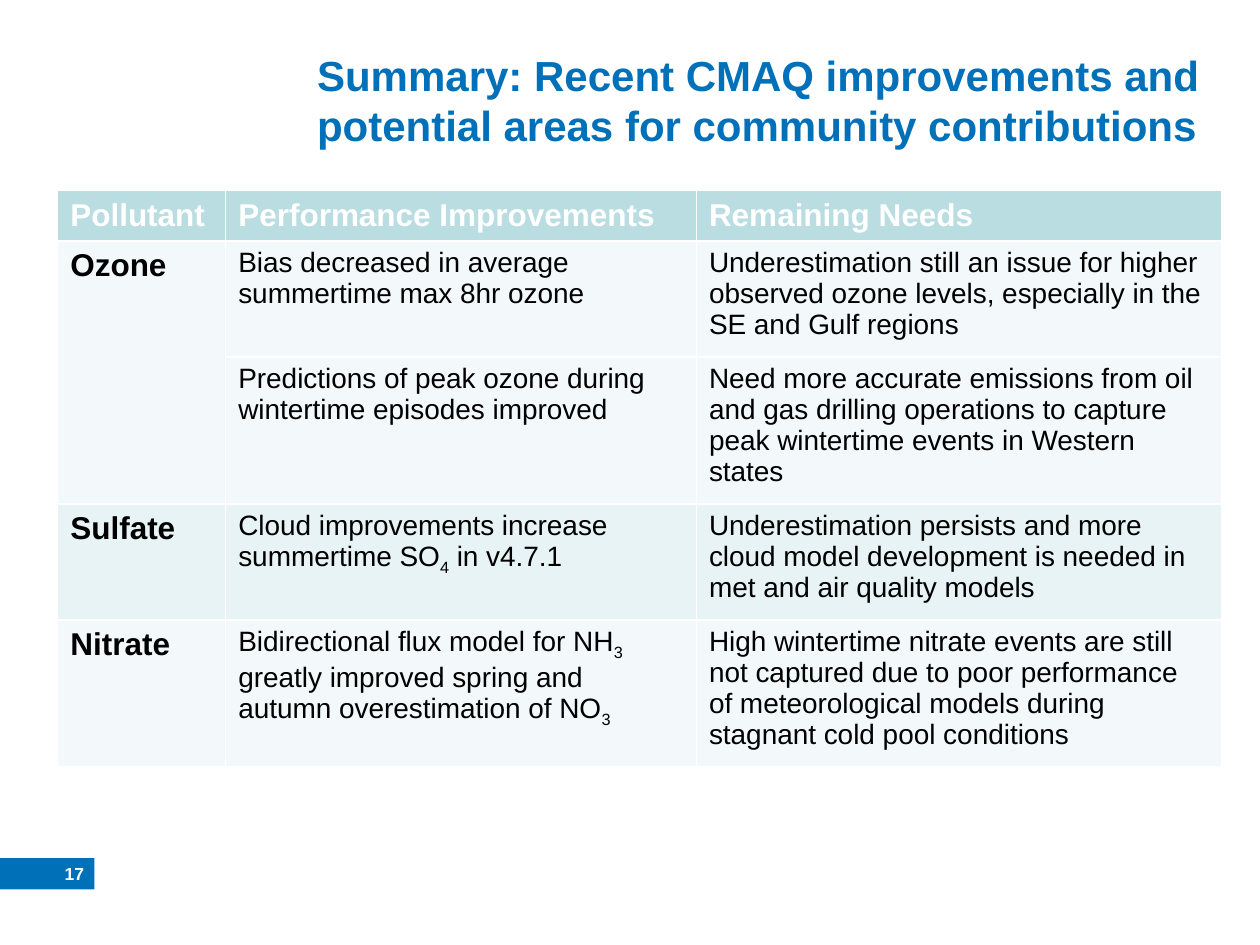
from lxml.etree import SubElement as Sub
from pptx import Presentation
from pptx.dml.color import RGBColor as RGB
from pptx.enum.shapes import MSO_SHAPE as Shape
from pptx.enum.text import MSO_ANCHOR as Anchor, MSO_AUTO_SIZE as Auto, PP_ALIGN as Align
from pptx.oxml.ns import qn
from pptx.util import Pt

BLUE = RGB(0x00, 0x70, 0xB9)
WHITE = RGB(0xFF, 0xFF, 0xFF)
BLACK = RGB(0, 0, 0)
TEAL = RGB(0xBA, 0xDD, 0xE1)
PALE = RGB(0xF3, 0xF9, 0xFA)
MINT = RGB(0xE7, 0xF3, 0xF4)

TITLE = "Summary: Recent CMAQ improvements and potential areas for community contributions"
PAGE = "17"
HEADS = ["Pollutant", "Performance Improvements", "Remaining Needs"]
# An underscore lowers the character after it.
ROWS = [
    ("Ozone", "Bias decreased in average summertime max 8hr ozone",
     "Underestimation still an issue for higher observed ozone levels, "
     "especially in the SE and Gulf regions"),
    ("", "Predictions of peak ozone during wintertime episodes improved",
     "Need more accurate emissions from oil and gas drilling operations "
     "to capture peak wintertime events in Western states"),
    ("Sulfate", "Cloud improvements increase summertime SO_4 in v4.7.1",
     "Underestimation persists and more cloud model development is needed "
     "in met and air quality models"),
    ("Nitrate", "Bidirectional flux model for NH_3 greatly improved spring and "
     "autumn overestimation of NO_3",
     "High wintertime nitrate events are still not captured due to poor "
     "performance of meteorological models during stagnant cold pool conditions"),
]
FILLS = [TEAL, PALE, PALE, MINT, PALE]
WIDTHS = [96, 269, 300]
HEIGHTS = [27, 66.3, 84, 66.3, 83.4]
LEFT, TOP = 33, 109

HEAD = dict(size=Pt(18), bold=True, color=WHITE)
NAME = dict(HEAD, color=BLACK)
BODY = dict(size=Pt(16), bold=False, color=BLACK)


def style(font, look):
    font.name = "Arial"
    for key, val in look.items():
        if key == "color":
            font.color.rgb = val
        else:
            setattr(font, key, val)


def write(para, text, look):
    first, *rest = text.split("_")
    parts = [(first, False)]
    for part in rest:
        parts += [(part[0], True), (part[1:], False)]
    for part, low in parts:
        if part:
            run = para.add_run()
            run.text = part
            style(run.font, look)
            if low:
                run._r.get_or_add_rPr().set("baseline", "-25000")


def edge(cell):
    """Give the cell thin white borders; call before its fill is set."""
    props = cell._tc.get_or_add_tcPr()
    for side in ("lnL", "lnR", "lnT", "lnB"):
        line = Sub(props, qn("a:" + side), w=str(Pt(1)))
        Sub(Sub(line, qn("a:solidFill")), qn("a:srgbClr"), val=str(WHITE))


def place(shape, *box):
    for key, val in zip(("left", "top", "width", "height"), box):
        setattr(shape, key, Pt(val))


def add_title(slide):
    title = slide.shapes.title
    place(title, 174, 18, 546, 78)
    frame = title.text_frame
    frame.auto_size, frame.vertical_anchor = Auto.NONE, Anchor.MIDDLE
    para = frame.paragraphs[0]
    para.alignment = Align.LEFT
    write(para, TITLE, dict(size=Pt(24), bold=True, color=BLUE))


def add_page(slide):
    top, high = Pt(490.3), Pt(18)
    bar = slide.shapes.add_shape(Shape.RECTANGLE, 0, top, Pt(54), high)
    bar.shadow.inherit = False
    bar.fill.solid()
    bar.fill.fore_color.rgb = BLUE
    bar.line.fill.background()
    frame = slide.shapes.add_textbox(0, top, Pt(48), high).text_frame
    frame.word_wrap, frame.vertical_anchor = True, Anchor.MIDDLE
    for side in ("left", "top", "right", "bottom"):
        setattr(frame, "margin_" + side, 0)
    para = frame.paragraphs[0]
    para.alignment = Align.RIGHT
    write(para, PAGE, dict(size=Pt(10), bold=True, color=WHITE))


def add_grid(slide):
    data = [HEADS, *ROWS]
    table = slide.shapes.add_table(
        len(data), len(HEADS), Pt(LEFT), Pt(TOP),
        Pt(sum(WIDTHS)), Pt(sum(HEIGHTS))).table
    for col, wide in zip(table.columns, WIDTHS):
        col.width = Pt(wide)
    for row, high in zip(table.rows, HEIGHTS):
        row.height = Pt(high)
    for r, texts in enumerate(data):
        for c, text in enumerate(texts):
            cell = table.cell(r, c)
            edge(cell)
            cell.fill.solid()
            cell.fill.fore_color.rgb = FILLS[r]
            cell.vertical_anchor = Anchor.TOP if r else Anchor.MIDDLE
            look = HEAD if r == 0 else NAME if c == 0 else BODY
            write(cell.text_frame.paragraphs[0], text, look)
    table.cell(1, 0).merge(table.cell(2, 0))


def main():
    deck = Presentation()
    deck.slide_width, deck.slide_height = Pt(720), Pt(540)
    slide = deck.slides.add_slide(deck.slide_layouts[5])
    add_title(slide)
    add_page(slide)
    add_grid(slide)
    deck.save("out.pptx")


if __name__ == "__main__":
    main()
